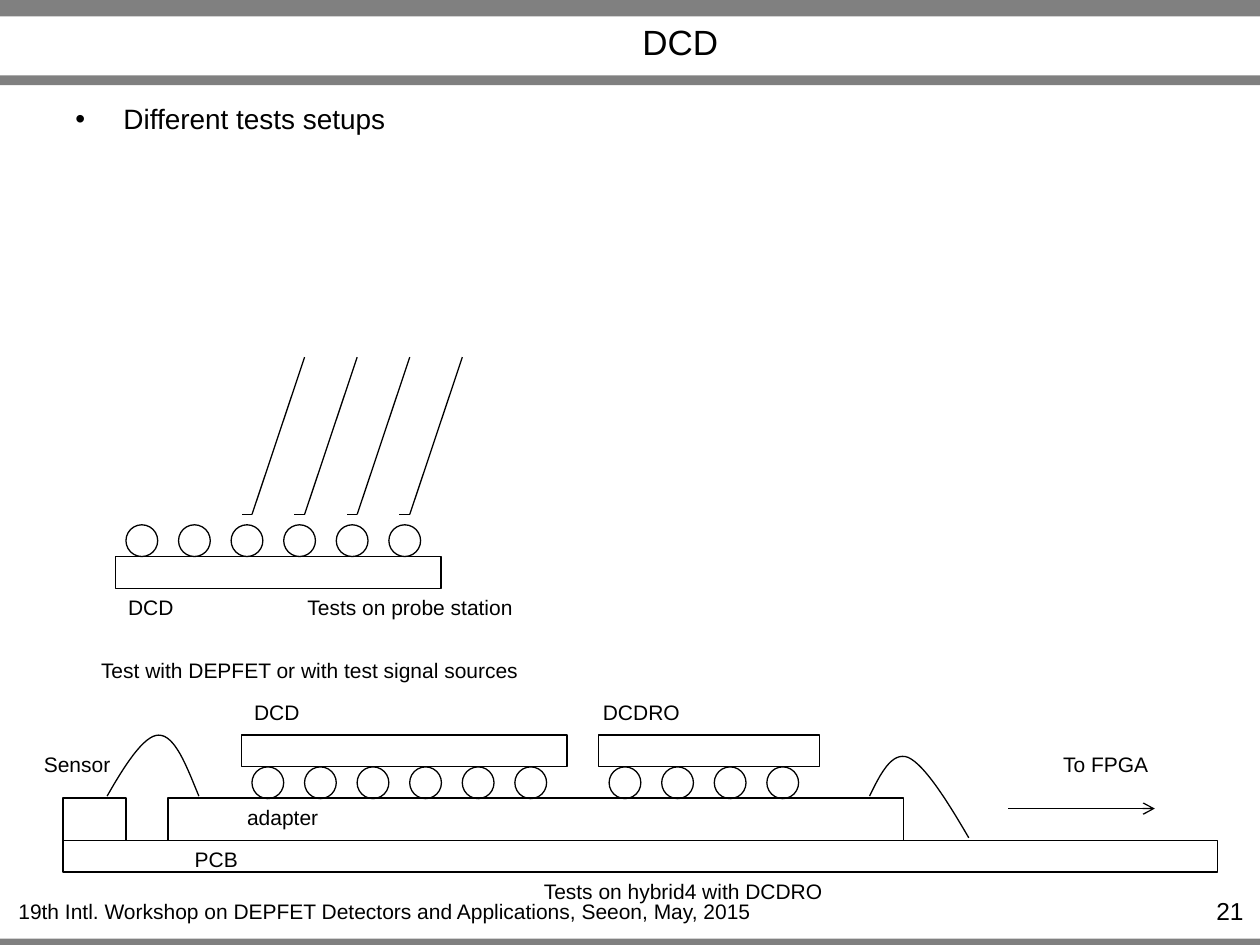
from lxml.etree import SubElement
from pptx import Presentation
from pptx.dml.color import RGBColor
from pptx.enum.shapes import MSO_CONNECTOR, MSO_SHAPE
from pptx.enum.text import MSO_ANCHOR, PP_ALIGN
from pptx.oxml.ns import qn
from pptx.util import Cm, Pt

COLORS = {"bar": "808080", "ink": "000000"}
BALL, PITCH, BALL_INSET = 0.64, 1.06, 0.21
LINE_WIDTH = Pt(0.75)


def color(name):
    return RGBColor.from_string(COLORS[name])


def add_text(s, text, x, y, w, h=0.76, size=12, align=PP_ALIGN.CENTER,
             anchor=MSO_ANCHOR.TOP, wrap=False, bullet_indent=None):
    tf = s.shapes.add_textbox(Cm(x), Cm(y), Cm(w), Cm(h)).text_frame
    tf.word_wrap = wrap
    tf.vertical_anchor = anchor
    p = tf.paragraphs[0]
    p.alignment = align
    if bullet_indent:
        pPr = p._p.get_or_add_pPr()
        pPr.set("marL", str(Cm(bullet_indent)))
        pPr.set("indent", str(-Cm(bullet_indent)))
        SubElement(pPr, qn("a:buFont"), typeface="Arial")
        SubElement(pPr, qn("a:buChar"), char="•")
    r = p.add_run()
    r.text = text
    r.font.name = "Arial"
    r.font.size = Pt(size)
    r.font.color.rgb = color("ink")


def outline(sp):
    sp.shadow.inherit = False
    sp.fill.background()
    sp.line.color.rgb = color("ink")
    sp.line.width = LINE_WIDTH


def add_outlined(s, kind, x, y, w, h):
    outline(s.shapes.add_shape(kind, Cm(x), Cm(y), Cm(w), Cm(h)))


def add_line(s, x1, y1, x2, y2, arrow=False):
    c = s.shapes.add_connector(MSO_CONNECTOR.STRAIGHT, Cm(x1), Cm(y1), Cm(x2), Cm(y2))
    c.line.color.rgb = color("ink")
    c.line.width = LINE_WIDTH
    if arrow:
        SubElement(c.line._get_or_add_ln(), qn("a:tailEnd"), type="arrow")
    SubElement(c._element.spPr, qn("a:effectLst"))


def bezier(p0, p1, p2, p3, steps=16):
    for i in range(1, steps + 1):
        t = i / steps
        u = 1 - t
        yield tuple(u**3 * a + 3 * u * u * t * b + 3 * u * t * t * c + t**3 * d
                    for a, b, c, d in zip(p0, p1, p2, p3))


def add_bond_wire(s, x, y, points):
    curve = [points[0], *bezier(*points[:4]), *bezier(*points[3:])]
    start, *rest = [(Cm(x + px), Cm(y + py)) for px, py in curve]
    fb = s.shapes.build_freeform(*start)
    fb.add_line_segments(rest, close=False)
    outline(fb.convert_to_shape())


def add_chip(s, x, y, w, balls, balls_below):
    add_outlined(s, MSO_SHAPE.RECTANGLE, x, y, w, 0.64)
    ball_y = y + 0.64 if balls_below else y - BALL
    for i in range(balls):
        add_outlined(s, MSO_SHAPE.OVAL, x + BALL_INSET + i * PITCH, ball_y, BALL, BALL)


def add_frame(s, w, h):
    for y, height in ((0, 0.33), (1.52, 0.2), (h - 0.13, 0.13)):
        sp = s.shapes.add_shape(MSO_SHAPE.RECTANGLE, 0, Cm(y), Cm(w), Cm(height))
        sp.shadow.inherit = False
        sp.fill.solid()
        sp.fill.fore_color.rgb = color("bar")
        sp.line.fill.background()
    add_text(s, "19th Intl. Workshop on DEPFET Detectors and Applications, Seeon, May, 2015",
             0.05, h - 1.07, 15.42)
    add_text(s, "21", w - 2.29, h - 1.12, 2.21, 0.61, size=14, align=PP_ALIGN.RIGHT, wrap=True)


def add_heading(s, x, y, w):
    add_text(s, "DCD", x + 2.03, y, w - 2.03, 0.97, size=20, anchor=MSO_ANCHOR.MIDDLE, wrap=True)
    add_text(s, "Different tests setups", x, y + 1.57, w, 3.78, size=16,
             align=PP_ALIGN.LEFT, wrap=True, bullet_indent=0.97)


def add_probe_station(s, x, y):
    add_chip(s, x, y + 4.02, 6.56, balls=6, balls_below=False)
    for i in range(4):
        bend = x + 2.75 + i * PITCH
        add_line(s, bend, y + 3.17, bend + PITCH, y)
        add_line(s, bend, y + 3.17, bend - 0.21, y + 3.17)
    add_text(s, "DCD", x, y + 4.66, 1.42)
    add_text(s, "Tests on probe station", x + 3.59, y + 4.66, 4.7)


def add_hybrid(s, x, y):
    add_chip(s, x + 3.6, y, 6.56, balls=6, balls_below=True)
    add_chip(s, x + 10.8, y, 4.45, balls=4, balls_below=True)
    boards = ((0, 1.27, 1.27, 0.85), (2.12, 1.27, 14.82, 0.85), (0, 2.12, 23.28, 0.64))
    for dx, dy, w, h in boards:
        add_outlined(s, MSO_SHAPE.RECTANGLE, x + dx, y + dy, w, h)
    add_bond_wire(s, x, y, [(2.74, 1.23), (2.49, 0.62), (2.26, 0), (1.93, 0),
                            (1.63, 0), (1.24, 0.62), (0.89, 1.23)])
    add_bond_wire(s, x, y, [(16.26, 1.23), (16.48, 0.78), (16.71, 0.32), (17.04, 0.45),
                            (17.37, 0.6), (17.83, 1.33), (18.26, 2.07)])
    add_line(s, x + 19.05, y + 1.48, x + 22.01, y + 1.48, arrow=True)
    labels = (
        ("Test with DEPFET or with test signal sources", 0.48, -1.69, 8.99),
        ("DCD", 3.6, -0.85, 1.42),
        ("DCDRO", 10.62, -0.85, 2.08),
        ("Sensor", -0.64, 0.21, 1.85),
        ("To FPGA", 19.89, 0.21, 2.26),
        ("adapter", 3.45, 1.27, 1.96),
        ("PCB", 2.39, 2.12, 1.4),
        ("Tests on hybrid4 with DCDRO", 9.42, 2.76, 6.17),
    )
    for text, dx, dy, w in labels:
        add_text(s, text, x + dx, y + dy, w)


def main():
    prs = Presentation()
    prs.slide_width, prs.slide_height = Cm(25.4), Cm(19.05)
    s = prs.slides.add_slide(prs.slide_layouts[6])
    add_frame(s, 25.4, 19.05)
    add_heading(s, 1.27, 0.36, 22.86)
    add_probe_station(s, 2.33, 7.2)
    add_hybrid(s, 1.27, 14.82)
    prs.save("out.pptx")


if __name__ == "__main__":
    main()
